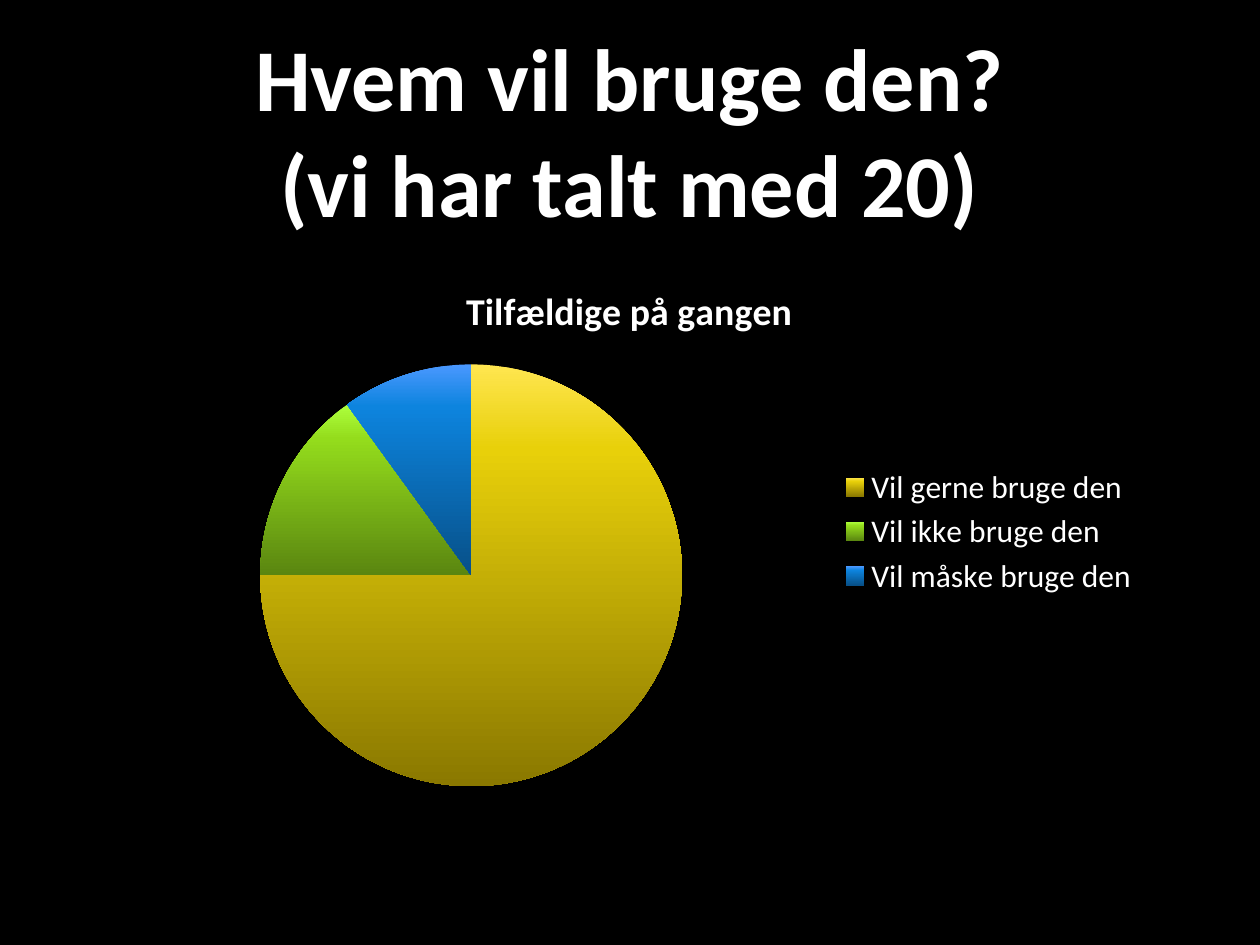
from copy import deepcopy

from pptx import Presentation
from pptx.chart.data import CategoryChartData
from pptx.dml.color import RGBColor as Rgb
from pptx.enum.chart import XL_CHART_TYPE as Kind, XL_LEGEND_POSITION as Side
from pptx.enum.text import MSO_ANCHOR as Anchor, PP_ALIGN as Align
from pptx.oxml.ns import qn
from pptx.util import Cm, Pt

COLOURS = {"back": "000000", "text": "FFFFFF"}
# Light top, base and dark bottom of each slice
SHADES = {
    "Vil gerne bruge den": ("FFE650", "E8D00A", "8A7800"),
    "Vil ikke bruge den": ("ADFF3C", "94DC1C", "5A8610"),
    "Vil måske bruge den": ("4A98FF", "0D84DE", "075088"),
}
VALUES = (75, 15, 10)
STOPS = (0, 0.2, 1)


def style(font, size, bold=False):
    look = {"name": "Calibri", "size": Pt(size), "bold": bold}
    for key, value in look.items():
        setattr(font, key, value)
    font.color.rgb = Rgb.from_string(COLOURS["text"])


def add_title(slide, box, text):
    frame = slide.shapes.add_textbox(*box).text_frame
    frame.word_wrap = True
    frame.vertical_anchor = Anchor.MIDDLE
    para = frame.paragraphs[0]
    para.text = text
    para.alignment = Align.CENTER
    style(para.font, 50.4, True)


def shade(chart, points):
    """Give each slice a three-stop gradient running downwards."""
    fills = [points[i].format.fill for i in range(len(SHADES))]
    for fill in fills:
        fill.gradient()
        fill.gradient_angle = 270
    for stops in chart.element.iter(qn("a:gsLst")):
        stops.append(deepcopy(stops[-1]))
    for fill, shades in zip(fills, SHADES.values()):
        for stop, place, colour in zip(fill.gradient_stops, STOPS, shades):
            stop.position = place
            stop.color.rgb = Rgb.from_string(colour)


def add_pie(slide, box, title):
    data = CategoryChartData()
    data.categories = list(SHADES)
    data.add_series(title, VALUES)
    chart = slide.shapes.add_chart(Kind.PIE, *box, data).chart
    style(chart.font, 18)

    chart.has_title = True
    frame = chart.chart_title.text_frame
    frame.text = title
    style(frame.paragraphs[0].runs[0].font, 21.6, True)
    chart.chart_title.include_in_layout = False

    chart.has_legend = True
    chart.legend.position = Side.RIGHT
    chart.legend.include_in_layout = False
    style(chart.legend.font, 18)

    plot = chart.plots[0]
    plot.vary_by_categories = True
    shade(chart, plot.series[0].points)


def main():
    deck = Presentation()
    deck.slide_width, deck.slide_height = Cm(25.4), Cm(19.05)
    slide = deck.slides.add_slide(deck.slide_layouts[6])
    back = slide.background.fill
    back.solid()
    back.fore_color.rgb = Rgb.from_string(COLOURS["back"])

    left, width = Cm(2.16), Cm(21.06)
    add_title(slide, (left, Cm(0.3), width, Cm(4.6)),
              "Hvem vil bruge den?\v(vi har talt med 20)")
    add_pie(slide, (left, Cm(5.23), width, Cm(10.97)), "Tilfældige på gangen")
    deck.save("out.pptx")


if __name__ == "__main__":
    main()
